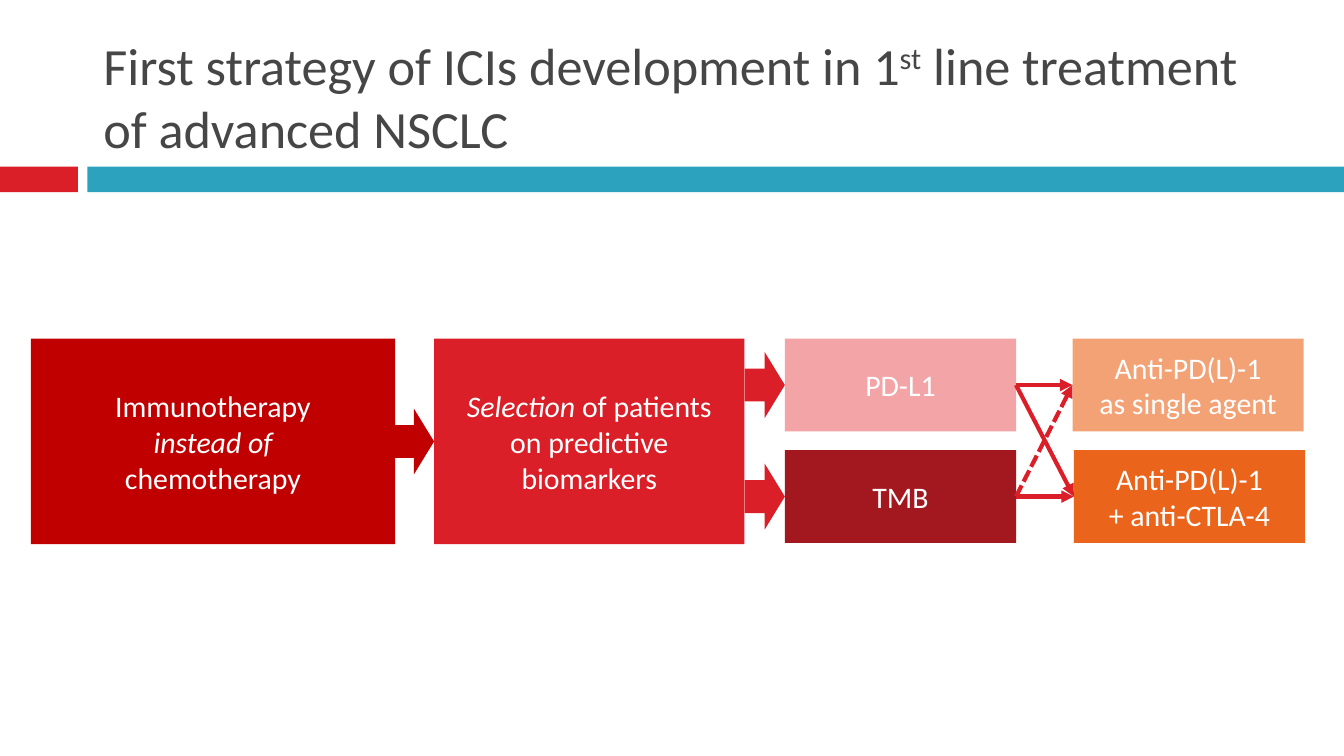
from lxml.etree import SubElement
from pptx import Presentation
from pptx.dml.color import RGBColor
from pptx.enum.dml import MSO_LINE
from pptx.enum.shapes import MSO_CONNECTOR, MSO_SHAPE
from pptx.enum.text import MSO_ANCHOR, PP_ALIGN
from pptx.oxml.ns import qn
from pptx.util import Inches, Pt

WHITE = RGBColor(0xFF, 0xFF, 0xFF)
GREY = RGBColor(0x46, 0x46, 0x46)
TEAL = RGBColor(0x2D, 0xA2, 0xBF)
RED = RGBColor(0xDA, 0x1F, 0x28)
DEEP_RED = RGBColor(0xC0, 0x00, 0x00)
DARK_RED = RGBColor(0xA3, 0x17, 0x1E)
PINK = RGBColor(0xF2, 0xA4, 0xA7)
PEACH = RGBColor(0xF3, 0xA2, 0x76)
ORANGE = RGBColor(0xEB, 0x64, 0x1B)
FONT = "Calibri"

# Content: each run is (text, style)
TITLE = [("First strategy of ICIs development in 1", ""), ("st", "super"),
         (" line treatment of advanced NSCLC", "")]

# Flow geometry: two rows; a tall box spans both
TOP, TALL, ROW, PITCH = 2.52, 1.53, 0.69, 0.83
ROW_TOPS = [TOP, TOP + PITCH]
ARROW_W, ARROW_H = 0.3, 0.49

# Boxes: key, left, top, width, height, fill, paragraphs
BOXES = [
    ("immunotherapy", 0.23, TOP, 2.71, TALL, DEEP_RED,
     [[("Immunotherapy", "")], [("instead of", "italic")], [("chemotherapy", "")]]),
    ("selection", 3.23, TOP, 2.31, TALL, RED,
     [[("Selection ", "italic"), ("of patients", "")],
      [("on predictive biomarkers", "")]]),
    ("PD-L1", 5.84, ROW_TOPS[0], 1.72, ROW, PINK, [[("PD-L1", "")]]),
    ("TMB", 5.84, ROW_TOPS[1], 1.72, ROW, DARK_RED, [[("TMB", "")]]),
    ("single", 7.98, ROW_TOPS[0], 1.72, ROW, PEACH,
     [[("Anti-PD(L)-1", "")], [("as single agent", "")]]),
    ("combination", 7.99, ROW_TOPS[1], 1.72, ROW, ORANGE,
     [[("Anti-PD(L)-1", "")], [("+ anti-CTLA-4", "")]]),
]
# Block arrows: left edge, vertical centre, fill
BLOCK_ARROWS = [(2.93, TOP + TALL / 2, DEEP_RED)] + [
    (5.54, row_top + ROW / 2, RED) for row_top in ROW_TOPS]
# Links: biomarker, treatment, dashed
LINKS = [("PD-L1", "single", False), ("TMB", "combination", False),
         ("PD-L1", "combination", False), ("TMB", "single", True)]

# Widescreen slide, 16:9
prs = Presentation()
prs.slide_width = Inches(10)
prs.slide_height = prs.slide_width * 9 // 16
slide = prs.slides.add_slide(prs.slide_layouts[6])


def add_block(kind, left, top, width, height, fill):
    block = slide.shapes.add_shape(
        kind, Inches(left), Inches(top), Inches(width), Inches(height))
    block.shadow.inherit = False
    block.fill.solid()
    block.fill.fore_color.rgb = fill
    block.line.fill.background()
    return block


def write(frame, paragraphs, size, color, align, anchor):
    frame.word_wrap = True
    frame.vertical_anchor = anchor
    for index, runs in enumerate(paragraphs):
        paragraph = frame.paragraphs[0] if index == 0 else frame.add_paragraph()
        paragraph.alignment = align
        paragraph.font.name = FONT
        paragraph.font.size = Pt(size)
        paragraph.font.color.rgb = color
        for text, style in runs:
            run = paragraph.add_run()
            run.text = text
            if style == "italic":
                run.font.italic = True
            elif style == "super":
                run._r.get_or_add_rPr().set("baseline", "30000")


# Title and the band below it
add_block(MSO_SHAPE.RECTANGLE, 0, 1.24, 0.58, 0.19, RED)
add_block(MSO_SHAPE.RECTANGLE, 0.65, 1.24, 9.35, 0.19, TEAL)
title = slide.shapes.add_textbox(Inches(0.67), Inches(0.13), Inches(8.92), Inches(1.1))
write(title.text_frame, [TITLE], 28, GREY, PP_ALIGN.LEFT, MSO_ANCHOR.BOTTOM)

# Strategy boxes
boxes = {}
for key, left, top, width, height, fill, paragraphs in BOXES:
    boxes[key] = add_block(MSO_SHAPE.RECTANGLE, left, top, width, height, fill)
    write(boxes[key].text_frame, paragraphs, 16, WHITE,
          PP_ALIGN.CENTER, MSO_ANCHOR.MIDDLE)

# Block arrows between the stages
for left, centre, fill in BLOCK_ARROWS:
    add_block(MSO_SHAPE.RIGHT_ARROW, left, centre - ARROW_H / 2, ARROW_W, ARROW_H, fill)

# Links from biomarkers to treatments
for biomarker, treatment, dashed in LINKS:
    link = slide.shapes.add_connector(MSO_CONNECTOR.STRAIGHT, 0, 0, 0, 0)
    link.begin_connect(boxes[biomarker], 3)
    link.end_connect(boxes[treatment], 1)
    link.line.color.rgb = RED
    link.line.width = Pt(2.25)
    if dashed:
        link.line.dash_style = MSO_LINE.SQUARE_DOT
    properties = link._element.spPr
    SubElement(properties.get_or_add_ln(), qn("a:tailEnd"), type="triangle")
    SubElement(properties, qn("a:effectLst"))

prs.save("out.pptx")
